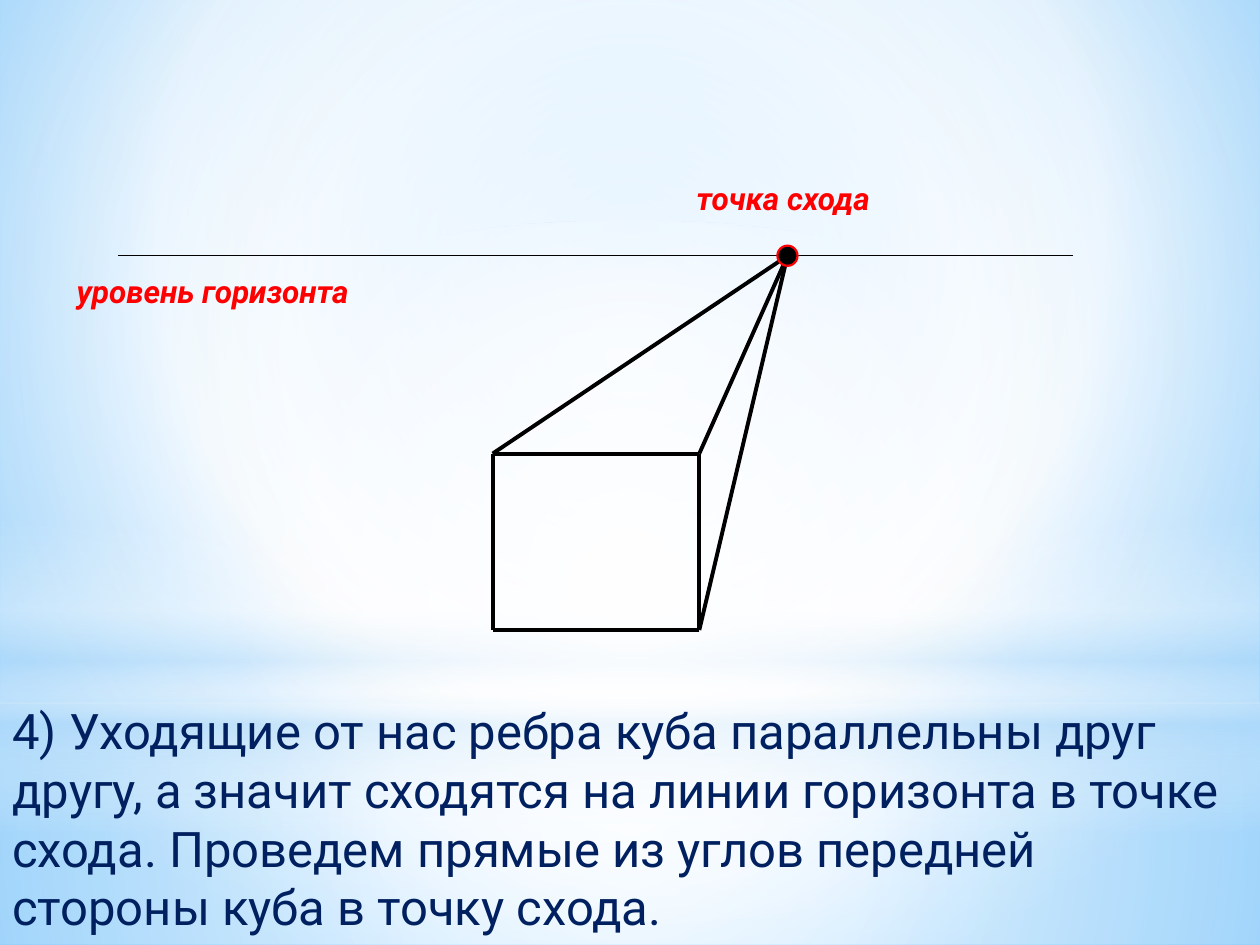
"""Build a slide on one-point perspective: a cube's edges meet at the vanishing point."""
from lxml.etree import SubElement
from pptx import Presentation
from pptx.dml.color import RGBColor
from pptx.enum.shapes import MSO_CONNECTOR, MSO_SHAPE
from pptx.enum.text import MSO_AUTO_SIZE
from pptx.oxml.ns import qn
from pptx.util import Inches, Pt

WIDTH, HEIGHT = 10, 7.5
FLOOR = 5.58
HORIZON = 2.03
LEFT, RIGHT, TOP, BOTTOM = 3.91, 5.55, 3.6, 5
VANISHING_POINT = (6.25, HORIZON)
DOT = 0.16
COLORS = {
    "ink": "000000",
    "accent": "FF0000",
    "text": "002060",
    "white": "FFFFFF",
    "mist": "B4DCFA",
    "sky": "9ED5FF",
    "deep": "5BB9FF",
}
CENTER = (50, 50, 50, 50)
LABEL = {"size": Pt(18), "bold": True, "italic": True, "name": "Roboto"}
BODY = {"size": Pt(28), "name": "Roboto"}


def color(name):
    """Return the named colour."""
    return RGBColor.from_string(COLORS[name])


def set_gradient(fill, owner, stops, focus=None):
    """Fill with (position, colour, opacity) stops, around a focus or top to bottom."""
    fill.gradient()
    gradient = owner.xpath(".//a:gradFill")[0]
    for child in list(gradient):
        gradient.remove(child)
    stop_list = SubElement(gradient, qn("a:gsLst"))
    for position, name, opacity in stops:
        stop = SubElement(stop_list, qn("a:gs"), pos=str(position * 1000))
        value = SubElement(stop, qn("a:srgbClr"), val=COLORS[name])
        if opacity < 100:
            SubElement(value, qn("a:alpha"), val=str(opacity * 1000))
    if focus:
        circle = SubElement(gradient, qn("a:path"), path="circle")
        sides = {side: str(share * 1000) for side, share in zip("ltrb", focus)}
        SubElement(circle, qn("a:fillToRect"), **sides)
    else:
        SubElement(gradient, qn("a:lin"), ang="5400000", scaled="0")


def add_shape(slide, kind, box):
    """Add a preset shape without a shadow."""
    shape = slide.shapes.add_shape(kind, *map(Inches, box))
    shape.shadow.inherit = False
    return shape


def add_glow(slide, kind, top, height, stops, focus=None):
    """Add a full-width translucent band of light."""
    shape = add_shape(slide, kind, (0, top, WIDTH, height))
    shape.line.fill.background()
    set_gradient(shape.fill, shape._element.spPr, stops, focus)


def add_backdrop(slide):
    """Paint the background and the layers of light over it."""
    set_gradient(slide.background.fill, slide._element,
                 [(0, "sky", 100), (60, "white", 100), (100, "deep", 100)],
                 (20, 10, 20, 60))
    add_glow(slide, MSO_SHAPE.RECTANGLE, FLOOR, HEIGHT - FLOOR,
             [(0, "white", 91), (37, "white", 76), (100, "mist", 79)], CENTER)
    add_glow(slide, MSO_SHAPE.RECTANGLE, 0, FLOOR,
             [(0, "white", 89), (48, "white", 62), (100, "mist", 79)], CENTER)
    add_glow(slide, MSO_SHAPE.RECTANGLE, 4.12, 2.5,
             [(0, "white", 0), (29, "white", 30), (45, "mist", 40),
              (55, "white", 26), (65, "mist", 60), (100, "white", 0)])
    add_glow(slide, MSO_SHAPE.OVAL, 1.75, FLOOR,
             [(0, "white", 100), (56, "white", 0)], CENTER)


def add_line(slide, start, end, width=2.25):
    """Draw a straight black line between two points."""
    line = slide.shapes.add_connector(
        MSO_CONNECTOR.STRAIGHT, *map(Inches, (*start, *end)))
    line.line.color.rgb = color("ink")
    line.line.width = Pt(width)
    SubElement(line._element.spPr, qn("a:effectLst"))


def add_text(slide, box, text, font_format, color_name, wrap=False):
    """Add a text box with one formatted run."""
    frame = slide.shapes.add_textbox(*map(Inches, box)).text_frame
    frame.word_wrap = wrap
    frame.auto_size = MSO_AUTO_SIZE.SHAPE_TO_FIT_TEXT
    run = frame.paragraphs[0].add_run()
    run.text = text
    for attribute, value in font_format.items():
        setattr(run.font, attribute, value)
    run.font.color.rgb = color(color_name)


def add_cube(slide):
    """Draw the front face and the edges receding to the vanishing point."""
    corners = [(LEFT, TOP), (RIGHT, TOP), (RIGHT, BOTTOM), (LEFT, BOTTOM)]
    for start, end in zip(corners, corners[1:] + corners[:1]):
        add_line(slide, start, end)
    for corner in corners[:3]:
        add_line(slide, VANISHING_POINT, corner)


def add_vanishing_point(slide):
    """Mark the vanishing point with a red-rimmed dot."""
    x, y = VANISHING_POINT
    dot = add_shape(slide, MSO_SHAPE.OVAL, (x - DOT / 2, y - DOT / 2, DOT, DOT))
    dot.fill.solid()
    dot.fill.fore_color.rgb = color("ink")
    dot.line.color.rgb = color("accent")
    dot.line.width = Pt(1.25)


def main():
    """Build and save the slide."""
    presentation = Presentation()
    presentation.slide_width = Inches(WIDTH)
    presentation.slide_height = Inches(HEIGHT)
    slide = presentation.slides.add_slide(presentation.slide_layouts[6])
    add_backdrop(slide)
    add_line(slide, (0.94, HORIZON), (8.52, HORIZON), 0.75)
    add_cube(slide)
    add_text(slide, (5.43, 1.37, 1.77, 0.4), "точка схода", LABEL, "accent")
    add_text(slide, (0.51, 2.11, 2.7, 0.4), "уровень горизонта", LABEL, "accent")
    add_text(slide, (0, 5.51, 9.92, 1.99),
             "4) Уходящие от нас ребра куба параллельны друг другу, а значит "
             "сходятся на линии горизонта в точке схода. Проведем прямые из "
             "углов передней стороны куба в точку схода.",
             BODY, "text", wrap=True)
    add_vanishing_point(slide)
    presentation.save("out.pptx")


if __name__ == "__main__":
    main()
